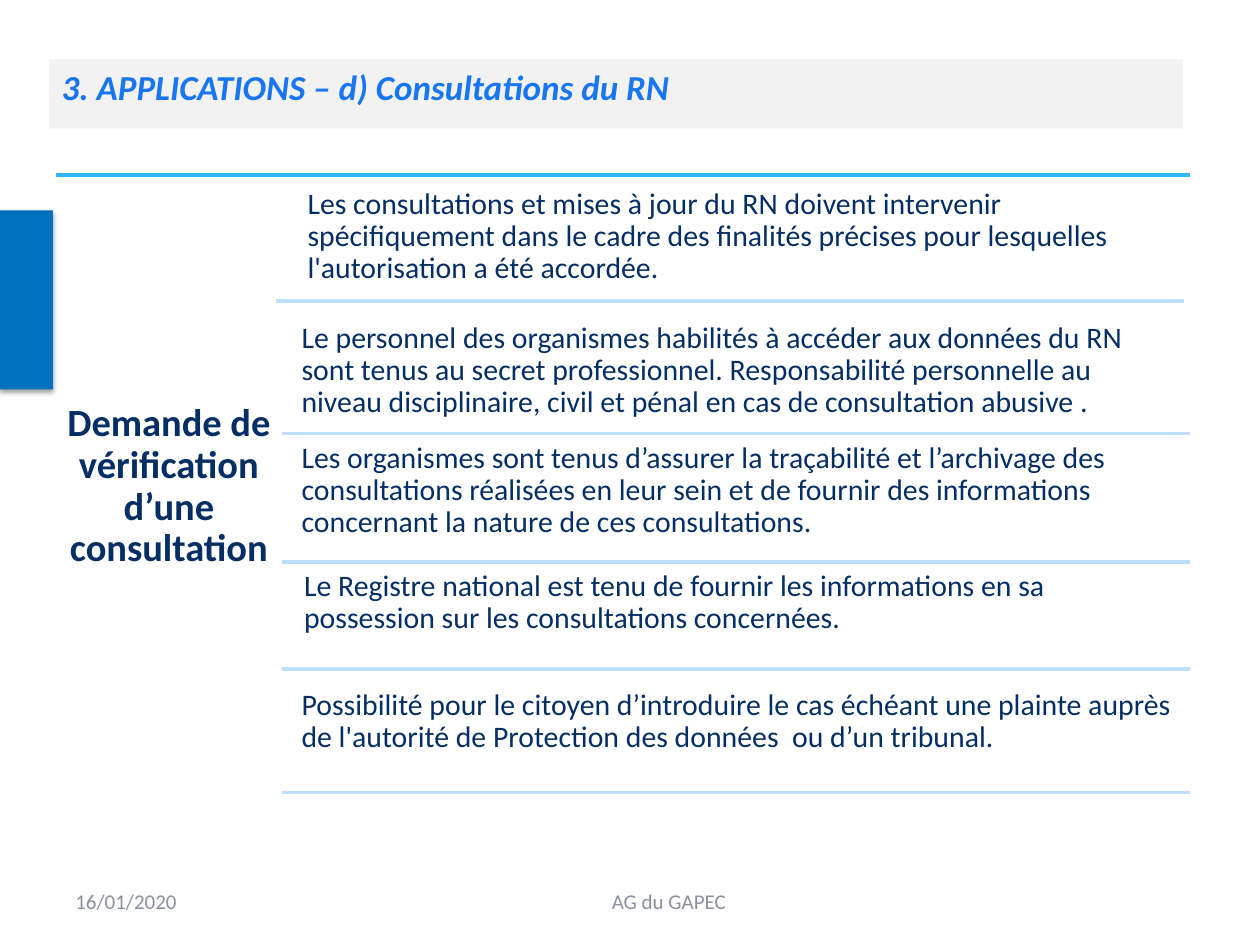
from dataclasses import dataclass

from lxml import etree
from pptx import Presentation
from pptx import util as u
from pptx.dml.color import RGBColor
from pptx.enum import shapes, text
from pptx.oxml import ns


@dataclass(frozen=True)
class Theme:
    """Colours, type sizes and font of the slide."""
    font: str = "Calibri"
    blue: str = "0070C0"
    title: str = "1876F4"
    panel: str = "F2F2F2"
    ink: str = "052E65"
    muted: str = "8C8F9F"
    top: str = "31B6FD"
    rule: str = "BEDEFE"
    head: int = 20
    label: int = 22
    body: int = 17
    small: int = 12


@dataclass(frozen=True)
class Box:
    """A rectangle in centimetres."""
    x: float
    y: float
    w: float
    h: float

    def sub(self, x, y, w, h):
        """Return a box placed relative to this one."""
        return Box(self.x + x, self.y + y, w, h)

    def dims(self):
        """Return left, top, width and height as lengths."""
        return [u.Cm(v) for v in (self.x, self.y, self.w, self.h)]


THEME = Theme()
ROWS = [
    ("Les consultations et mises à jour du RN doivent intervenir spécifiquement "
     "dans le cadre des finalités précises pour lesquelles l'autorisation a été "
     "accordée.", 4.9, 0.1, 4.45, 2.54),
    ("Le personnel des organismes habilités à accéder aux données du RN sont tenus "
     "au secret professionnel. Responsabilité personnelle au niveau disciplinaire, "
     "civil et pénal en cas de consultation abusive .", 4.78, 2.79, 4.57, 5.21),
    ("Les organismes sont tenus d’assurer la traçabilité et l’archivage des "
     "consultations réalisées en leur sein et de fournir des informations concernant "
     "la nature de ces consultations.", 4.78, 5.21, 4.57, 7.8),
    ("Le Registre national est tenu de fournir les informations en sa possession "
     "sur les consultations concernées.", 4.83, 7.8, 4.57, 9.96),
    ("Possibilité pour le citoyen d’introduire le cas échéant une plainte auprès de "
     "l'autorité de Protection des données  ou d’un tribunal.",
     4.78, 10.19, 4.57, 12.45),
]


def paint(fill, color):
    """Give a fill one solid colour."""
    fill.solid()
    fill.fore_color.rgb = RGBColor.from_string(color)


def write(shape, words, size, color, align=text.PP_ALIGN.LEFT,
          anchor=text.MSO_ANCHOR.TOP, bold=False, slant=False, lead=1.0, pad=None):
    """Write one formatted run into a shape."""
    frame = shape.text_frame
    frame.word_wrap = True
    frame.auto_size = text.MSO_AUTO_SIZE.NONE
    frame.vertical_anchor = anchor
    if pad is not None:
        frame.margin_left = frame.margin_right = u.Cm(pad)
        frame.margin_top = frame.margin_bottom = u.Cm(pad)
    para = frame.paragraphs[0]
    para.alignment = align
    para.line_spacing = lead
    run = para.add_run()
    run.text = words
    font = run.font
    font.name, font.size = THEME.font, u.Pt(size)
    font.bold, font.italic = bold, slant
    font.color.rgb = RGBColor.from_string(color)


def rule(slide, box, color):
    """Draw a level line along the top of a box."""
    x, y, w, _ = box.dims()
    line = slide.shapes.add_connector(shapes.MSO_CONNECTOR.STRAIGHT, x, y, x + w, y)
    line.line.width = u.Pt(2)
    paint(line.line.fill, color)
    etree.SubElement(line._element.spPr, ns.qn("a:effectLst"))


def accent(slide, box):
    """Draw the blue tab with its soft shadow."""
    tab = slide.shapes.add_shape(shapes.MSO_SHAPE.RECTANGLE, *box.dims())
    paint(tab.fill, THEME.blue)
    tab.line.fill.background()
    tab.shadow.inherit = False
    effects = tab._element.spPr.find(ns.qn("a:effectLst"))
    shade = etree.SubElement(effects, ns.qn("a:outerShdw"), blurRad=str(u.Pt(3.1)),
                             dist=str(u.Pt(1.6)), dir="5400000", rotWithShape="0")
    tint = etree.SubElement(shade, ns.qn("a:srgbClr"), val="000000")
    etree.SubElement(tint, ns.qn("a:alpha"), val="38000")


def heading(slide, box):
    """Place the title on its grey panel."""
    title = slide.shapes.title
    title.left, title.top, title.width, title.height = box.dims()
    paint(title.fill, THEME.panel)
    write(title, "3. APPLICATIONS – d) Consultations du RN", THEME.head,
          THEME.title, bold=True, slant=True)


def content(slide, box):
    """Place the label, the ruled rows and the top line."""
    rule(slide, box, THEME.top)
    label = slide.shapes.add_textbox(*box.sub(0, 0, 4.57, box.h).dims())
    write(label, "Demande de vérification d’une consultation", THEME.label, THEME.ink,
          text.PP_ALIGN.CENTER, text.MSO_ANCHOR.MIDDLE, bold=True, lead=0.9, pad=0.23)
    for words, left, top, start, end in ROWS:
        row = slide.shapes.add_textbox(*box.sub(left, top, 17.93, 2.36).dims())
        write(row, words, THEME.body, THEME.ink, lead=0.9, pad=0.18)
        rule(slide, box.sub(start, end, 18.29, 0), THEME.rule)


def footer(slide, box):
    """Place the date and the centred footer."""
    parts = [("16/01/2020", 0, 5.92, text.PP_ALIGN.LEFT),
             ("AG du GAPEC", 6.22, 11.99, text.PP_ALIGN.CENTER)]
    for words, left, width, align in parts:
        note = slide.shapes.add_textbox(*box.sub(left, 0, width, box.h).dims())
        write(note, words, THEME.small, THEME.muted, align, text.MSO_ANCHOR.MIDDLE)


def main():
    """Build and save the slide."""
    deck = Presentation()
    deck.slide_width, deck.slide_height = u.Cm(25.4), u.Cm(19.05)
    slide = deck.slides.add_slide(deck.slide_layouts[5])
    accent(slide, Box(0, 4.24, 1.07, 3.61))
    heading(slide, Box(0.99, 1.19, 22.86, 1.4))
    content(slide, Box(1.12, 3.53, 22.86, 12.57))
    footer(slide, Box(1.27, 17.65, 18.21, 1.02))
    deck.save("out.pptx")


if __name__ == "__main__":
    main()
